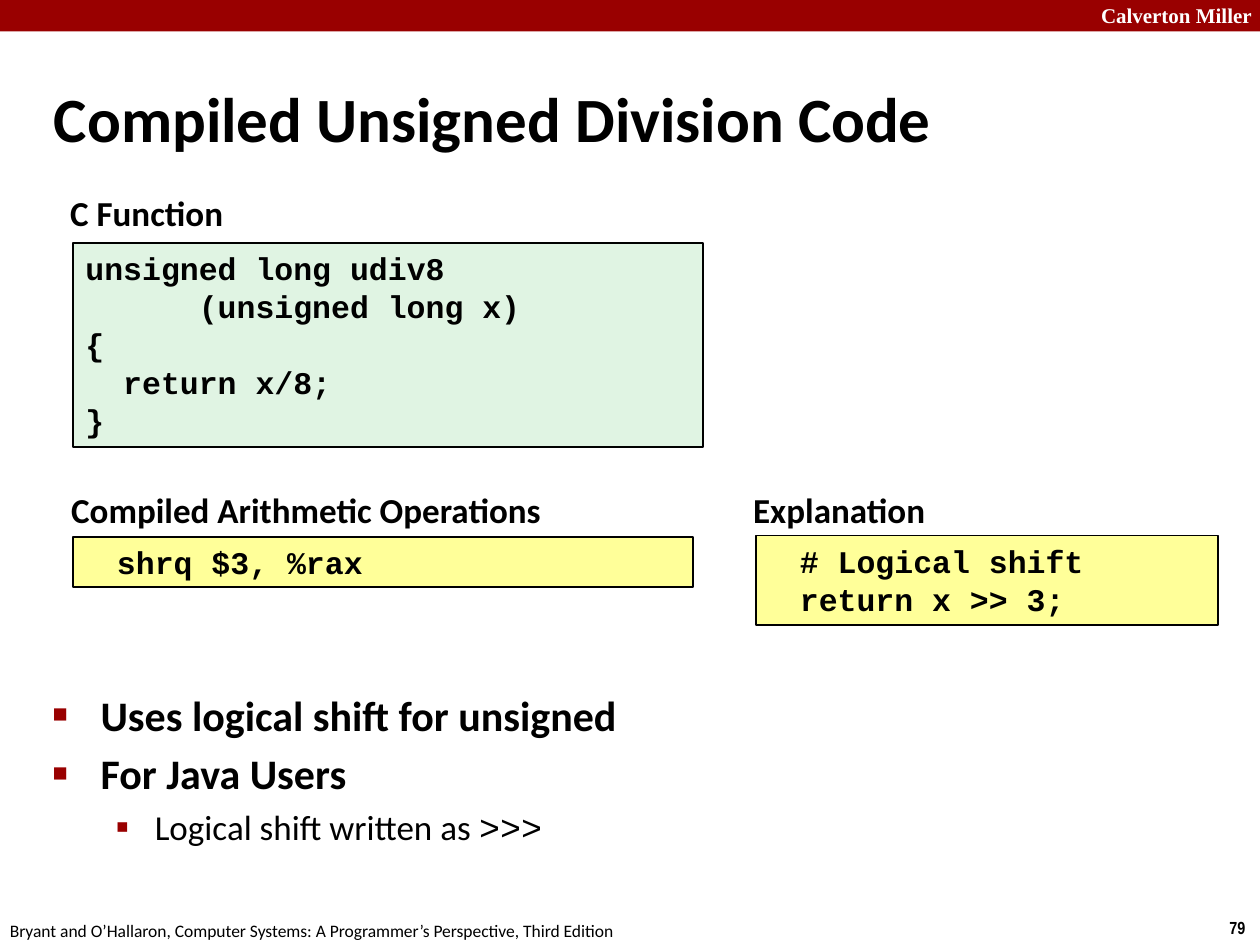
import pptx
import pptx.util
import pptx.dml.color
import pptx.enum.shapes
import pptx.enum.text
import pptx.oxml
import pptx.oxml.ns

Pt = pptx.util.Pt
HUES = {"red": "990000", "mint": "E0F4E3", "lemon": "FFFF99",
        "black": "000000", "white": "FFFFFF"}
COLS, ROWS = 100, 75


def tint(name):
    return pptx.dml.color.RGBColor.from_string(HUES[name])


class Deck:
    def __init__(self):
        self.prs = pptx.Presentation()
        self.prs.slide_width = pptx.util.Inches(10)
        self.prs.slide_height = pptx.util.Inches(7.5)
        self.slide = self.prs.slides.add_slide(self.prs.slide_layouts[6])

    def place(self, x, y, w, h):
        """Turn columns and rows into slide lengths."""
        col = self.prs.slide_width / COLS
        row = self.prs.slide_height / ROWS
        return [round(n) for n in (x * col, y * row, w * col, h * row)]

    def style(self, part, size, font="Calibri", bold=True, hue="black"):
        part.font.size = Pt(size)
        part.font.name = font
        part.font.bold = bold
        part.font.color.rgb = tint(hue)

    def rect(self, at, fill, line=None):
        kind = pptx.enum.shapes.MSO_SHAPE.RECTANGLE
        box = self.slide.shapes.add_shape(kind, *self.place(*at))
        box.shadow.inherit = False
        box.fill.solid()
        box.fill.fore_color.rgb = tint(fill)
        if line:
            box.line.color.rgb = tint(line)
            box.line.width = Pt(1)
        else:
            box.line.fill.background()
        return box

    def text(self, at, words, size, wrap=False, inset=None, **look):
        box = self.slide.shapes.add_textbox(*self.place(*at))
        frame = box.text_frame
        frame.word_wrap = wrap
        if inset:
            frame.margin_left = frame.margin_right = inset
            frame.margin_top = frame.margin_bottom = inset
        frame.text = words
        self.style(frame.paragraphs[0].runs[0], size, **look)
        return frame

    def title(self, at, words):
        frame = self.text(at, words, 36, wrap=True)
        frame.vertical_anchor = pptx.enum.text.MSO_ANCHOR.MIDDLE

    def label(self, at, words):
        frame = self.text(at, words, 20, inset=Pt(3.6))
        frame.paragraphs[0].alignment = pptx.enum.text.PP_ALIGN.CENTER

    def code(self, at, fill, lines):
        """Draw a listing; each line is (indent in inches, words)."""
        frame = self.rect(at, fill, "black").text_frame
        frame.word_wrap = True
        frame.vertical_anchor = pptx.enum.text.MSO_ANCHOR.TOP
        frame.text = "\n".join(words for _, words in lines)
        for para, (indent, _) in zip(frame.paragraphs, lines):
            para.alignment = pptx.enum.text.PP_ALIGN.LEFT
            para._p.get_or_add_pPr().set("marL", str(pptx.util.Inches(indent)))
            self.style(para.runs[0], 18, "Courier New")

    def bullet(self, para, left, hang, mark, scale):
        props = para._p.get_or_add_pPr()
        props.set("marL", str(pptx.util.Inches(left)))
        props.set("indent", str(-pptx.util.Inches(hang)))
        space = pptx.oxml.ns.nsdecls("a")
        for xml in (
            f'<a:buClr {space}><a:srgbClr val="{HUES["red"]}"/></a:buClr>',
            f'<a:buSzPct {space} val="{scale * 1000}"/>',
            f'<a:buFont {space} typeface="Arial"/>',
            f'<a:buChar {space} char="{mark}"/>',
        ):
            props.append(pptx.oxml.parse_xml(xml))

    def points(self, at, items):
        """Draw bullets; each item is (level, list of (words, font))."""
        frame = self.slide.shapes.add_textbox(*self.place(*at)).text_frame
        frame.word_wrap = True
        looks = [(24, True, 0.38, 0.38, "■", 60),
                 (20, False, 0.81, 0.31, "▪", 110)]
        for i, (level, parts) in enumerate(items):
            size, bold, left, hang, mark, scale = looks[level]
            para = frame.add_paragraph() if i else frame.paragraphs[0]
            para.level = level
            para.space_before = Pt(size * 0.2 if i else 0)
            self.bullet(para, left, hang, mark, scale)
            for words, font in parts:
                run = para.add_run()
                run.text = words
                self.style(run, size, font, bold)


def main():
    deck = Deck()
    deck.rect((0, 0, COLS, 2.5), "red")
    deck.text((86.4, -0.3, 14.3, 3), "Calverton Miller", 12, wrap=True,
              font="Times New Roman", hue="white")
    deck.text((96.6, 72.3, 3.4, 2.7), "79", 10, font="Arial Narrow")
    deck.text((-0.2, 72.5, 50.8, 2.7),
              "Bryant and O’Hallaron, Computer Systems: "
              "A Programmer’s Perspective, Third Edition", 10, bold=False)
    deck.title((3.3, 6.2, 86.7, 6.3), "Compiled Unsigned Division Code")

    deck.label((5, 14.7, 13.3, 4.4), "C Function")
    deck.code((5.8, 19.3, 50, 16.2), "mint", [
        (0, "unsigned long udiv8"), (0.9, "(unsigned long x)"), (0, "{"),
        (0.3, "return x/8;"), (0, "}")])
    deck.label((5, 38.3, 38.6, 4.4), "Compiled Arithmetic Operations")
    deck.code((5.8, 42.6, 49.2, 4), "lemon", [(0.25, "shrq $3, %rax")])
    deck.label((59.2, 38.3, 14.8, 4.4), "Explanation")
    deck.code((60, 42.5, 36.7, 7.1), "lemon", [
        (0.25, "# Logical shift"), (0.25, "return x >> 3;")])

    deck.points((3.2, 54.2, 90.9, 13), [
        (0, [("Uses logical shift for unsigned", "Calibri")]),
        (0, [("For Java Users", "Calibri")]),
        (1, [("Logical shift written as ", "Calibri"),
             (">>>", "Courier New")])])
    deck.prs.save("out.pptx")


if __name__ == "__main__":
    main()
